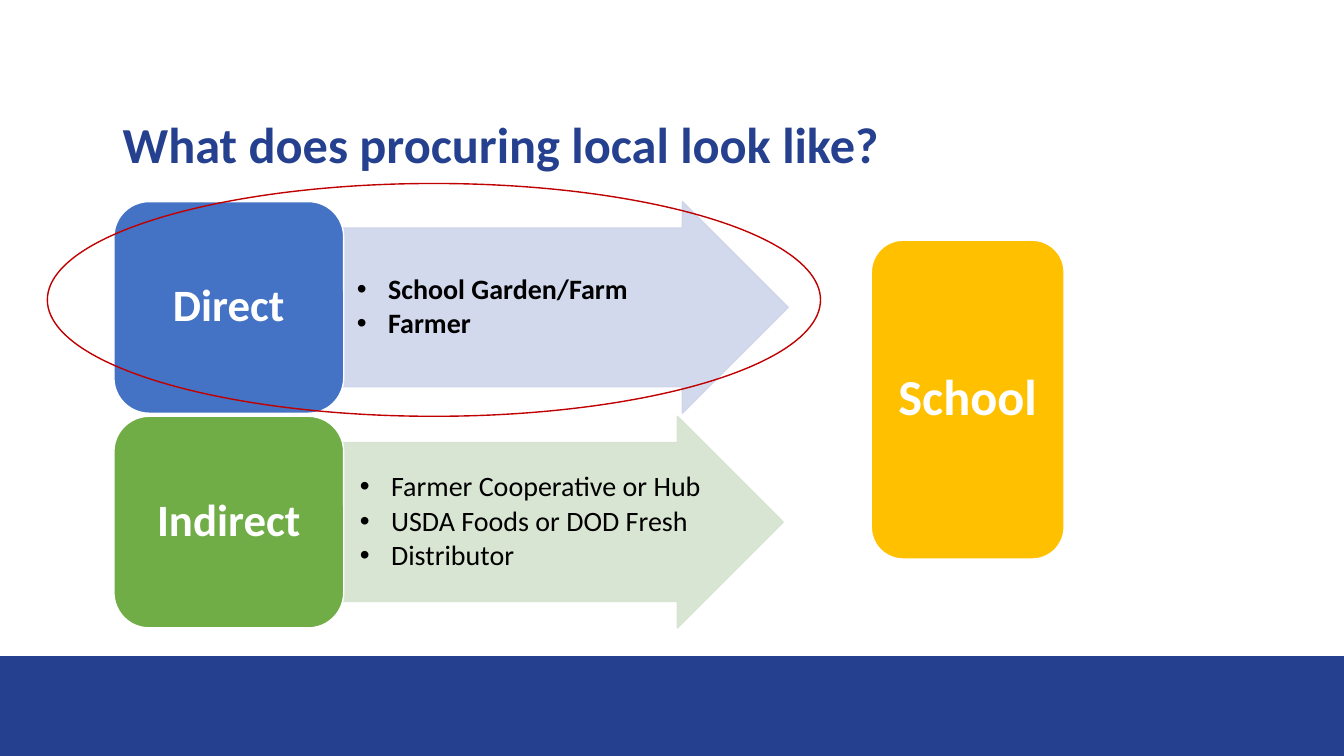
from lxml import etree
from pptx import Presentation
from pptx.dml.color import RGBColor
from pptx.enum.shapes import MSO_SHAPE
from pptx.enum.text import MSO_ANCHOR, PP_ALIGN
from pptx.oxml.ns import qn
from pptx.util import Inches, Pt

RECT, ROUND = MSO_SHAPE.RECTANGLE, MSO_SHAPE.ROUNDED_RECTANGLE
ARROW, OVAL = MSO_SHAPE.RIGHT_ARROW, MSO_SHAPE.OVAL
MIDDLE, CENTER, LEFT = MSO_ANCHOR.MIDDLE, PP_ALIGN.CENTER, PP_ALIGN.LEFT
WIDE, HIGH = 133.33, 75
NAVY, WHITE, BLACK = "24408E", "FFFFFF", "000000"


def color(code):
    return RGBColor.from_string(code)


def grid(*cells):
    """Turn columns and rows of a tenth of an inch into lengths."""
    return [Inches(cell / 10) for cell in cells]


def fade(paint, share):
    """Set the opacity, in percent, of the solid colours in a shape."""
    for tone in paint.iter(qn("a:srgbClr")):
        etree.SubElement(tone, qn("a:alpha")).set("val", str(share * 1000))


class Board:
    def __init__(self, deck, font):
        self.font = font
        self.slide = deck.slides.add_slide(deck.slide_layouts[5])

    def label(self, shape, text, size, tint, bold=True, align=CENTER):
        frame = shape.text_frame
        frame.text = text
        frame.word_wrap = True
        frame.vertical_anchor = MIDDLE
        for para in frame.paragraphs:
            para.alignment = align
            para.line_spacing = 0.9
            for run in para.runs:
                run.font.name = self.font
                run.font.size = Pt(size)
                run.font.bold = bold
                run.font.color.rgb = color(tint)
        return frame

    def title(self, text, *cells):
        head = self.slide.shapes.title
        head.left, head.top, head.width, head.height = grid(*cells)
        self.label(head, text, 36, NAVY)

    def shape(self, kind, cells, fill=None, line=None, width=1):
        item = self.slide.shapes.add_shape(kind, *grid(*cells))
        item.shadow.inherit = False
        if fill:
            item.fill.solid()
            item.fill.fore_color.rgb = color(fill)
        else:
            item.fill.background()
        if line:
            item.line.color.rgb = color(line)
            item.line.width = Pt(width)
        else:
            item.line.fill.background()
        return item

    def block(self, text, size, fill, cells, width=1):
        item = self.shape(ROUND, cells, fill, WHITE, width)
        self.label(item, text, size, WHITE)

    def arrow(self, items, fill, cells, bold):
        item = self.shape(ARROW, cells, fill, fill)
        item.adjustments[0], item.adjustments[1] = 0.75, 0.5
        fade(item._element.spPr, 90)
        frame = self.label(item, "\n".join(items), 20, BLACK, bold, LEFT)
        frame.margin_left = Inches(0.2)
        frame.margin_top = frame.margin_right = frame.margin_bottom = Inches(0.01)
        for para in frame.paragraphs:
            para.space_after = Pt(3)
            props = para._p.get_or_add_pPr()
            props.set("marL", str(Inches(0.31)))
            props.set("indent", str(-Inches(0.31)))
            etree.SubElement(props, qn("a:buFont")).set("typeface", "Arial")
            etree.SubElement(props, qn("a:buChar")).set("char", "•")


def main():
    deck = Presentation()
    deck.slide_width, deck.slide_height = grid(WIDE, HIGH)
    board = Board(deck, "Calibri")
    board.shape(RECT, (0, 65.1, WIDE, HIGH - 65.1), NAVY)
    board.title("What does procuring local look like?", 4.7, 11.3, 90, 6.6)

    routes = [
        ("Direct", "4472C4", "CFD5EA", 33.4, 44.8, True,
         ["School Garden/Farm", "Farmer"]),
        ("Indirect", "70AD47", "D5E3CF", 33.7, 44, False,
         ["Farmer Cooperative or Hub", "USDA Foods or DOD Fresh", "Distributor"]),
    ]
    for row, (name, fill, pale, left, width, bold, items) in enumerate(routes):
        top = 20 + 21.3 * row
        board.arrow(items, pale, (left, top, width, 21), bold)
        board.block(name, 32, fill, (11.3, top, 22.8, 21))

    board.block("School", 36, "FFC000", (86.4, 23.8, 19.2, 31.7), 1.5)
    board.shape(OVAL, (4.7, 18.2, 76.7, 23.1), line="C00000")
    deck.save("out.pptx")


if __name__ == "__main__":
    main()
